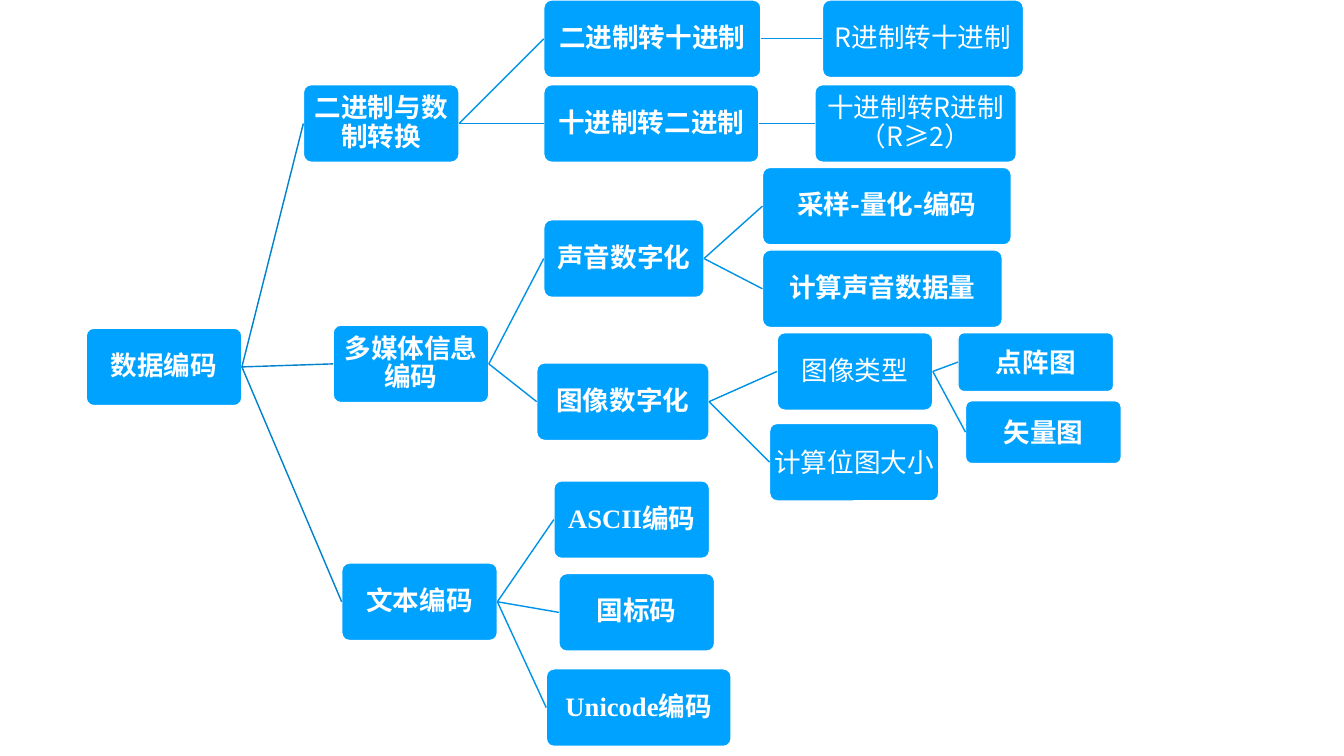
from dataclasses import dataclass

from lxml import etree
from pptx import Presentation
from pptx.dml.color import RGBColor
from pptx.enum.shapes import MSO_CONNECTOR, MSO_SHAPE
from pptx.enum.text import MSO_ANCHOR, PP_ALIGN
from pptx.oxml.ns import qn
from pptx.util import Inches, Pt

ROUNDED = MSO_SHAPE.ROUNDED_RECTANGLE
STRAIGHT = MSO_CONNECTOR.STRAIGHT
MIDDLE = MSO_ANCHOR.MIDDLE
CENTER = PP_ALIGN.CENTER

BOX_BLUE = RGBColor(0x00, 0xA2, 0xFF)
TRUNK_BLUE = RGBColor(0x00, 0x82, 0xCC)
BRANCH_BLUE = RGBColor(0x00, 0x93, 0xE7)
WHITE = RGBColor(0xFF, 0xFF, 0xFF)

CJK_FONT = "Noto Sans CJK SC"
SERIF_FONT = "Times New Roman"
LEFT_SIDE, RIGHT_SIDE = 1, 3


@dataclass
class Node:
    """A topic box; lengths are inches from the map's top left corner."""
    text: str
    left: float
    top: float
    width: float = 3.09
    height: float = 1.54
    children: tuple = ()
    bold: bool = True
    font: str = CJK_FONT
    spacing: float = 0.9


CONVERSION = Node("二进制与数制转换", 6.02, 1.68, children=(
    Node("二进制转十进制", 10.79, 0, 4.31, children=(
        Node("R进制转十进制", 16.32, 0, 3.99, bold=False),)),
    Node("十进制转二进制", 10.79, 1.68, 4.27, children=(
        Node("十进制转R进制（R≥2）", 16.17, 1.68, 4, bold=False),)),
))
SOUND = Node("声音数字化", 10.79, 4.36, 3.18, children=(
    Node("采样-量化-编码", 15.13, 3.32, 4.94),
    Node("计算声音数据量", 15.13, 4.96, 4.76),
))
IMAGE = Node("图像数字化", 10.65, 7.2, 3.42, children=(
    Node("图像类型", 15.42, 6.6, bold=False, children=(
        Node("点阵图", 19.01, 6.6, height=1.17, spacing=1.0),
        Node("矢量图", 19.16, 7.95, height=1.25, spacing=1.0),
    )),
    Node("计算位图大小", 15.27, 8.4, 3.36, bold=False, spacing=1.0),
))
MULTIMEDIA = Node("多媒体信息编码", 6.61, 6.45, children=(SOUND, IMAGE))
TEXT_CODING = Node("文本编码", 6.78, 11.17, children=(
    Node("ASCII编码", 10.99, 9.54, font=SERIF_FONT),
    Node("国标码", 11.09, 11.38),
    Node("Unicode编码", 10.84, 13.27, 3.67, font=SERIF_FONT),
))
ROOT = Node("数据编码", 1.71, 6.51,
            children=(CONVERSION, MULTIMEDIA, TEXT_CODING))


def add_box(slide, node, x, y):
    sp = slide.shapes.add_shape(
        ROUNDED, Inches(x + node.left), Inches(y + node.top),
        Inches(node.width), Inches(node.height))
    sp.adjustments[0] = 0.1
    sp.shadow.inherit = False
    sp.fill.solid()
    sp.fill.fore_color.rgb = BOX_BLUE
    sp.line.color.rgb = WHITE
    sp.line.width = Pt(2)

    # Label
    tf = sp.text_frame
    tf.word_wrap = True
    tf.vertical_anchor = MIDDLE
    tf.margin_left = tf.margin_right = Inches(0.03)
    tf.margin_top = tf.margin_bottom = Inches(0.03)
    p = tf.paragraphs[0]
    p.alignment = CENTER
    p.line_spacing = node.spacing
    r = p.add_run()
    r.text = node.text
    r.font.size = Pt(38)
    r.font.bold = node.bold
    r.font.color.rgb = WHITE
    r.font.name = node.font
    # East Asian typeface
    etree.SubElement(r.font._element, qn("a:ea")).set("typeface", CJK_FONT)
    return sp


def add_link(slide, parent, child, color):
    line = slide.shapes.add_connector(STRAIGHT, 0, 0, 0, 0)
    line.begin_connect(parent, RIGHT_SIDE)
    line.end_connect(child, LEFT_SIDE)
    line.line.color.rgb = color
    line.line.width = Pt(2)
    etree.SubElement(line._element.spPr, qn("a:effectLst"))


def add_mind_map(slide, node, x, y, link_color=TRUNK_BLUE):
    """Draw a topic with all its subtopics and return the topic's box."""
    box = add_box(slide, node, x, y)
    for child in node.children:
        child_box = add_mind_map(slide, child, x, y, BRANCH_BLUE)
        add_link(slide, box, child_box, link_color)
    return box


def main():
    prs = Presentation()
    prs.slide_width = Inches(26.67)
    prs.slide_height = Inches(15)
    slide = prs.slides.add_slide(prs.slide_layouts[6])
    add_mind_map(slide, ROOT, 0, 0)
    prs.save("out.pptx")


if __name__ == "__main__":
    main()
